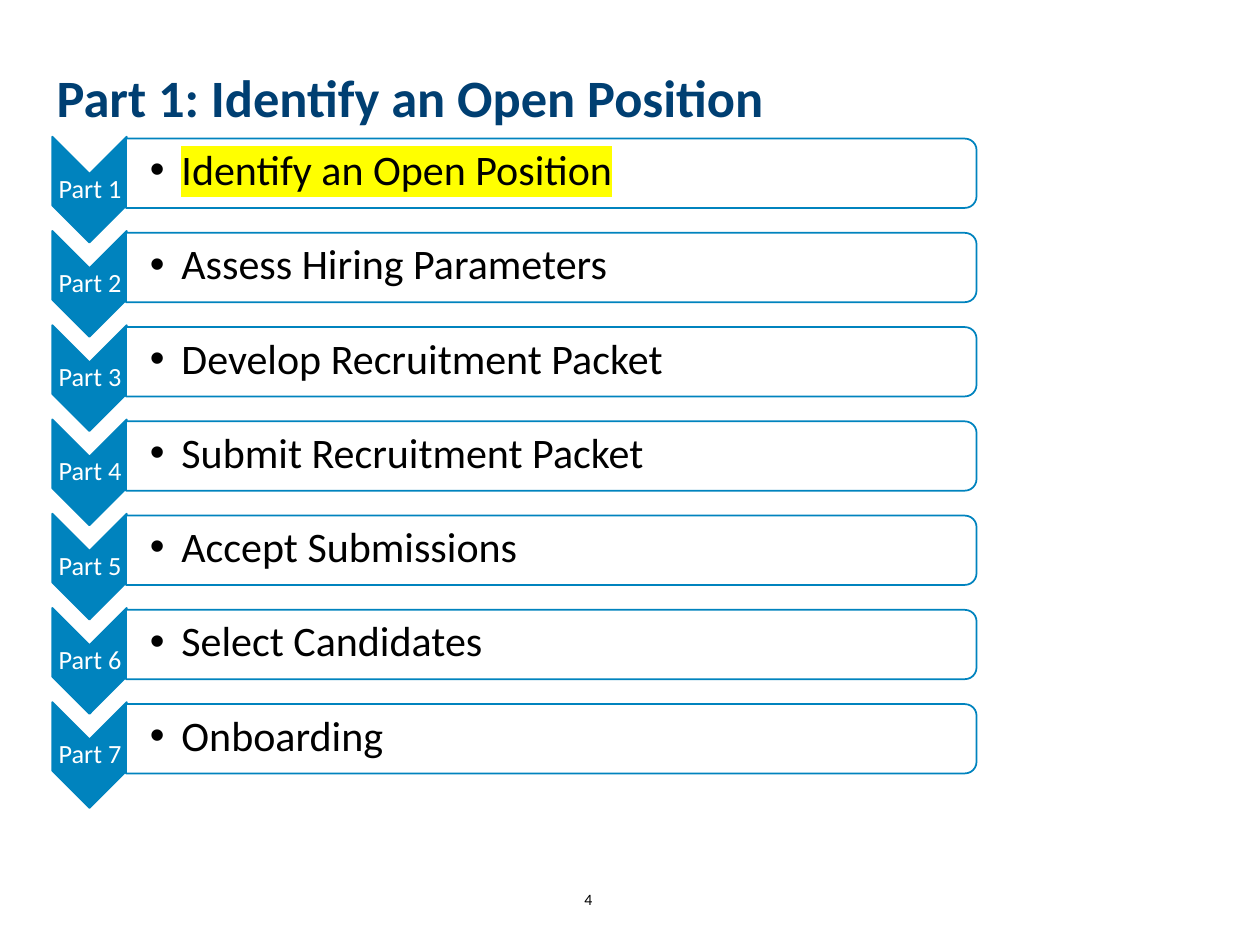
from dataclasses import dataclass

from lxml.etree import SubElement
from pptx import Presentation
from pptx.dml.color import RGBColor as RGB
from pptx.enum.shapes import MSO_SHAPE as Kind
from pptx.enum.text import MSO_ANCHOR as Anchor, PP_ALIGN as Align
from pptx.oxml.ns import qn
from pptx.util import Inches, Pt


@dataclass(frozen=True)
class Theme:
    face: str = "Calibri"
    navy: RGB = RGB(0x00, 0x3F, 0x72)
    blue: RGB = RGB(0x00, 0x83, 0xBE)
    white: RGB = RGB(0xFF, 0xFF, 0xFF)
    black: RGB = RGB(0, 0, 0)
    mark: str = "FFFF00"
    head: int = 30
    item: int = 24
    label: int = 15
    small: int = 9


theme = Theme()


def write(box, text, size, color, align=Align.LEFT, insets=None, **format):
    """Fill a box with one styled line and return its paragraph."""
    frame = box.text_frame
    frame.word_wrap = True
    frame.vertical_anchor = Anchor.MIDDLE
    if insets:
        for side, gap in zip(("left", "top", "right", "bottom"), insets):
            setattr(frame, f"margin_{side}", Inches(gap))
    para = frame.paragraphs[0]
    para.alignment = align
    para.line_spacing = 0.9
    run = para.add_run()
    run.text = text
    look = {"name": theme.face, "size": Pt(size), "bold": False, **format}
    run.font.color.rgb = color
    for key, value in look.items():
        setattr(run.font, key, value)
    return para


def block(kind, left, top, width, height, fill):
    """Add a shape turned a quarter clockwise, given by its unturned frame."""
    shape = slide.shapes.add_shape(kind, *map(Inches, (left, top, width, height)))
    shape.rotation = 90
    shape.shadow.inherit = False
    shape.fill.solid()
    shape.fill.fore_color.rgb = fill
    shape.line.color.rgb = theme.blue
    shape.line.width = Pt(1)
    return shape


deck = Presentation()
deck.slide_width, deck.slide_height = Inches(10), Inches(7.5)
slide = deck.slides.add_slide(deck.slide_layouts[5])

title = slide.shapes.title
title.left, title.top = Inches(0.35), Inches(0.37)
title.width, title.height = Inches(7.97), Inches(0.85)
write(title, "Part 1: Identify an Open Position", theme.head, theme.navy, bold=True)

number = slide.shapes.add_textbox(Inches(4.39), Inches(6.95), Inches(0.56), Inches(0.4))
write(number, "4", theme.small, theme.black, Align.CENTER)

steps = [
    "Identify an Open Position",
    "Assess Hiring Parameters",
    "Develop Recruitment Packet",
    "Submit Recruitment Packet",
    "Accept Submissions",
    "Select Candidates",
    "Onboarding",
]
current = 0
pitch = 0.748

for index, step in enumerate(steps):
    drop = index * pitch
    block(Kind.CHEVRON, 0.29, 1.21 + drop, 0.84, 0.59, theme.blue)
    label = slide.shapes.add_textbox(
        Inches(0.42), Inches(1.38 + drop), Inches(0.59), Inches(0.25))
    write(label, f"Part {index + 1}", theme.label, theme.white, Align.CENTER, [0.01] * 4)

    block(Kind.ROUND_2_SAME_RECTANGLE, 4.1, drop - 2, 0.55, 6.75, theme.white)
    entry = slide.shapes.add_textbox(
        Inches(1), Inches(1.12 + drop), Inches(6.72), Inches(0.49))
    para = write(entry, step, theme.item, theme.black, insets=(0.19, 0.02, 0.02, 0.02))
    para.level = 1
    props = para._p.get_or_add_pPr()
    props.set("marL", str(Inches(0.25)))
    props.set("indent", str(Inches(-0.25)))
    SubElement(props, qn("a:buFont"), typeface="Arial")
    SubElement(props, qn("a:buChar"), char="•")

    if index == current:
        style = para.runs[0].font._element
        glow = SubElement(style, qn("a:highlight"))
        SubElement(glow, qn("a:srgbClr"), val=theme.mark)
        style.find(qn("a:solidFill")).addnext(glow)

deck.save("out.pptx")
